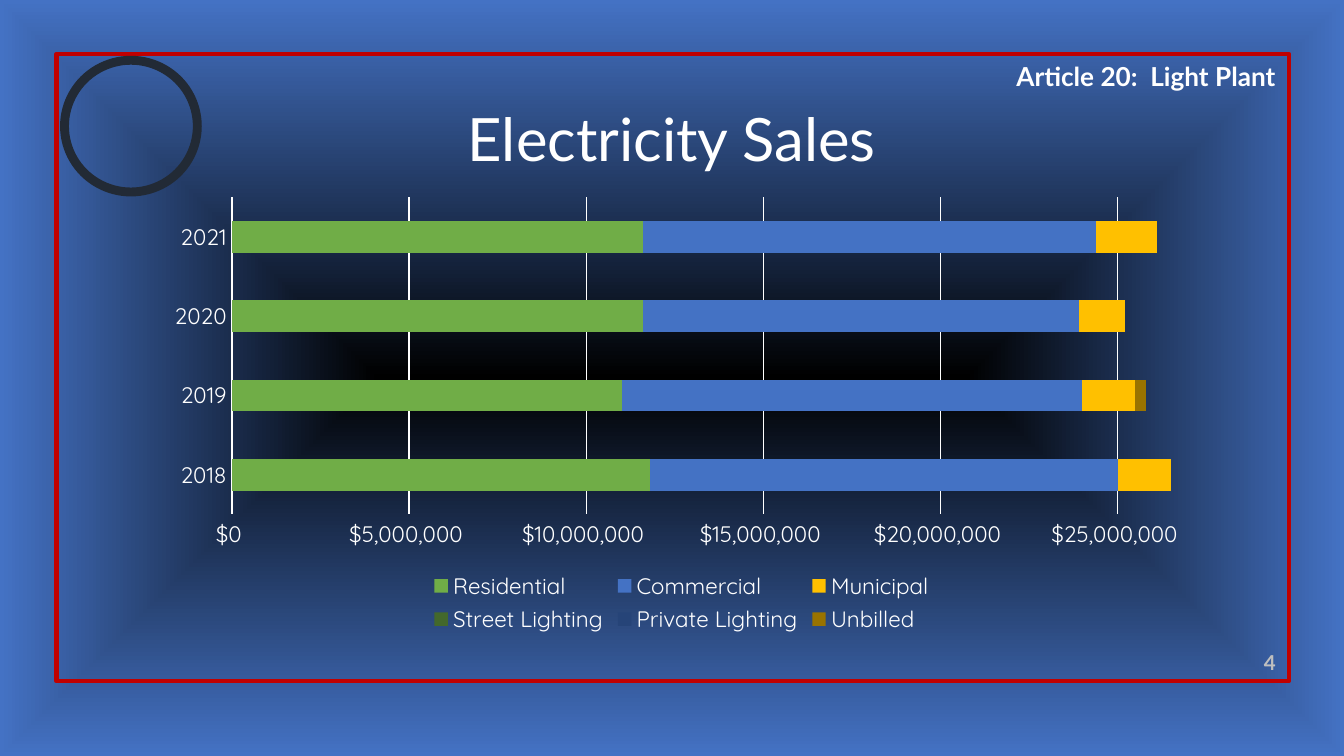
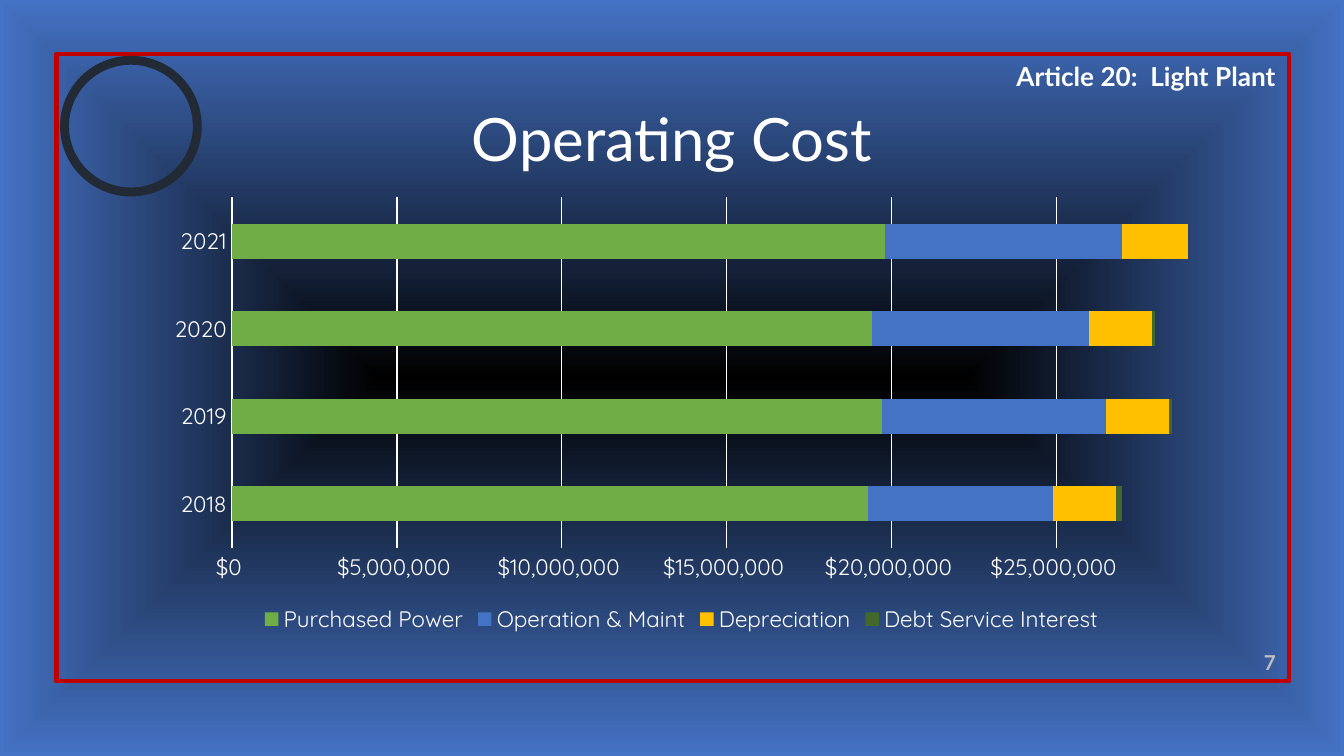
from lxml import etree
from pptx import Presentation
from pptx.chart.data import CategoryChartData
from pptx.dml.color import RGBColor
from pptx.enum.chart import XL_CHART_TYPE, XL_LEGEND_POSITION, XL_TICK_MARK
from pptx.enum.shapes import MSO_SHAPE
from pptx.enum.text import MSO_ANCHOR, PP_ALIGN
from pptx.oxml.ns import nsdecls, qn
from pptx.util import Cm, Pt

BAR = XL_CHART_TYPE.BAR_STACKED
BOTTOM = XL_LEGEND_POSITION.BOTTOM
NO_TICK = XL_TICK_MARK.NONE
RECT, OVAL = MSO_SHAPE.RECTANGLE, MSO_SHAPE.OVAL
MID, TOP, LOW = MSO_ANCHOR.MIDDLE, MSO_ANCHOR.TOP, MSO_ANCHOR.BOTTOM
CENTER, RIGHT = PP_ALIGN.CENTER, PP_ALIGN.RIGHT

HUE = {
    "black": "000000", "white": "FFFFFF", "gray": "BFBFBF", "slate": "44546A",
    "red": "C00000", "ink": "222A35", "green": "70AD47", "blue": "4472C4",
    "gold": "FFC000", "moss": "43682B", "navy": "264478", "brown": "997300",
}
ORDER = ("green", "blue", "gold", "moss", "navy", "brown")

# Text formats
HEAD = {"name": "Lato", "size": Pt(32), "bold": False}
BAND = {"name": "Lato", "size": Pt(14), "bold": True}
PAGE = {"name": "Lato", "size": Pt(11), "bold": True}
LABEL = {"name": "Quicksand", "size": Pt(12), "bold": False}

# Boxes in cm: left, top, width, height
FRAME = (1.07, 1.02, 23.29, 11.86)
TITLE = (1.27, 1.65, 22.86, 1.91)
PLOT = (2.9, 3.56, 19.96, 8.51)

YEARS = ("2018", "2019", "2020", "2021")
MONEY = '"$"#,##0_);\\("$"#,##0\\)'
M = 1_000_000

# Title, page, axis end and series in millions
SLIDES = (
    ("Electricity Sales", 4, 27, {
        "Residential": (11.8, 11, 11.6, 11.6),
        "Commercial": (13.2, 13, 12.3, 12.8),
        "Municipal": (1.5, 1.5, 1.3, 1.7),
        "Street Lighting": (0, 0, 0, 0),
        "Private Lighting": (0, 0, 0, 0),
        "Unbilled": (-0.5, 0.3, -0.1, -0.2),
    }),
    ("Operating Cost", 7, 29, {
        "Purchased Power": (19.3, 19.7, 19.4, 19.8),
        "Operation & Maint": (5.6, 6.8, 6.6, 7.2),
        "Depreciation": (1.9, 1.9, 1.9, 2),
        "Debt Service Interest": (0.2, 0.1, 0.1, 0.3),
    }),
)


def color(name):
    return RGBColor.from_string(HUE[name])


def apply(item, form):
    for key, value in form.items():
        setattr(item, key, value)


def style(font, form, hue="white"):
    apply(font, form)
    font.color.rgb = color(hue)


def place(box):
    return [Cm(n) for n in box]


def write(shape, text, form, hue, align, anchor):
    frame = shape.text_frame
    apply(frame, {"text": text, "word_wrap": True, "vertical_anchor": anchor})
    line = frame.paragraphs[0]
    line.alignment = align
    style(line.runs[0].font, form, hue)


def backdrop(master):
    """Fill the master with a gradient that spreads from its centre."""
    fill = master.background.fill
    fill.solid()
    stops = "".join(
        f'<a:gs pos="{pos}"><a:srgbClr val="{HUE[hue]}"/></a:gs>'
        for pos, hue in ((0, "black"), (100000, "blue"), (100000, "slate")))
    grad = etree.fromstring(
        f'<a:gradFill {nsdecls("a")} rotWithShape="1"><a:gsLst>{stops}</a:gsLst>'
        '<a:path path="shape"><a:fillToRect l="50000" t="50000" r="50000" b="50000"/>'
        '</a:path></a:gradFill>')
    back = master.element.find(".//" + qn("p:bgPr"))
    back.replace(back.find(qn("a:solidFill")), grad)


def outline(slide, kind, box, hue, width):
    shape = slide.shapes.add_shape(kind, *place(box))
    shape.shadow.inherit = False
    shape.fill.background()
    shape.line.color.rgb = color(hue)
    shape.line.width = Pt(width)


def border(slide, box, page):
    """Red frame with its ring, article band and page number."""
    left, top, wide, high = box
    end, base = left + wide, top + high
    outline(slide, RECT, box, "red", 2.25)
    outline(slide, OVAL, (left + 0.15, top + 0.12, 2.51, 2.49), "ink", 4.75)
    band = slide.shapes.add_textbox(*place((end - 6.78, top, 6.78, 0.86)))
    write(band, "Article 20:  Light Plant", BAND, "white", RIGHT, TOP)
    foot = slide.shapes.add_textbox(*place((end - 1.48, base - 0.61, 1.48, 0.61)))
    write(foot, str(page), PAGE, "gray", RIGHT, LOW)


def heading(slide, box, text):
    title = slide.shapes.title
    apply(title, dict(zip(("left", "top", "width", "height"), place(box))))
    write(title, text, HEAD, "white", CENTER, MID)


def bars(slide, box, top, rows):
    """Stacked bars by year, with dollars along the foot."""
    data = CategoryChartData(number_format=MONEY)
    data.categories = YEARS
    for name, vals in rows.items():
        data.add_series(name, [round(v * M) for v in vals])
    chart = slide.shapes.add_chart(BAR, *place(box), data).chart
    apply(chart, {"has_title": False, "has_legend": True})
    style(chart.font, LABEL)

    # Bars
    plot = chart.plots[0]
    apply(plot, {"gap_width": 150, "overlap": 100, "vary_by_categories": False})
    for row, hue in zip(plot.series, ORDER):
        row.invert_if_negative = False
        row.format.fill.solid()
        row.format.fill.fore_color.rgb = color(hue)

    # Axes
    for axis in (chart.category_axis, chart.value_axis):
        apply(axis, {"major_tick_mark": NO_TICK, "minor_tick_mark": NO_TICK})
        axis.format.line.fill.background()
        style(axis.tick_labels.font, LABEL)
    scale = chart.value_axis
    apply(scale, {"minimum_scale": 0, "maximum_scale": top * M,
                  "major_unit": 5 * M, "has_major_gridlines": True})
    apply(scale.tick_labels, {"number_format": MONEY,
                              "number_format_is_linked": False})
    grid = scale.major_gridlines.format.line
    grid.color.rgb = color("white")
    grid.width = Pt(0.75)

    # Legend
    apply(chart.legend, {"position": BOTTOM, "include_in_layout": False})
    style(chart.legend.font, LABEL)


def main():
    deck = Presentation()
    apply(deck, {"slide_width": Cm(25.4), "slide_height": Cm(14.29)})
    backdrop(deck.slide_master)
    for text, page, top, rows in SLIDES:
        slide = deck.slides.add_slide(deck.slide_layouts[5])
        border(slide, FRAME, page)
        heading(slide, TITLE, text)
        bars(slide, PLOT, top, rows)
    deck.save("out.pptx")


if __name__ == "__main__":
    main()
